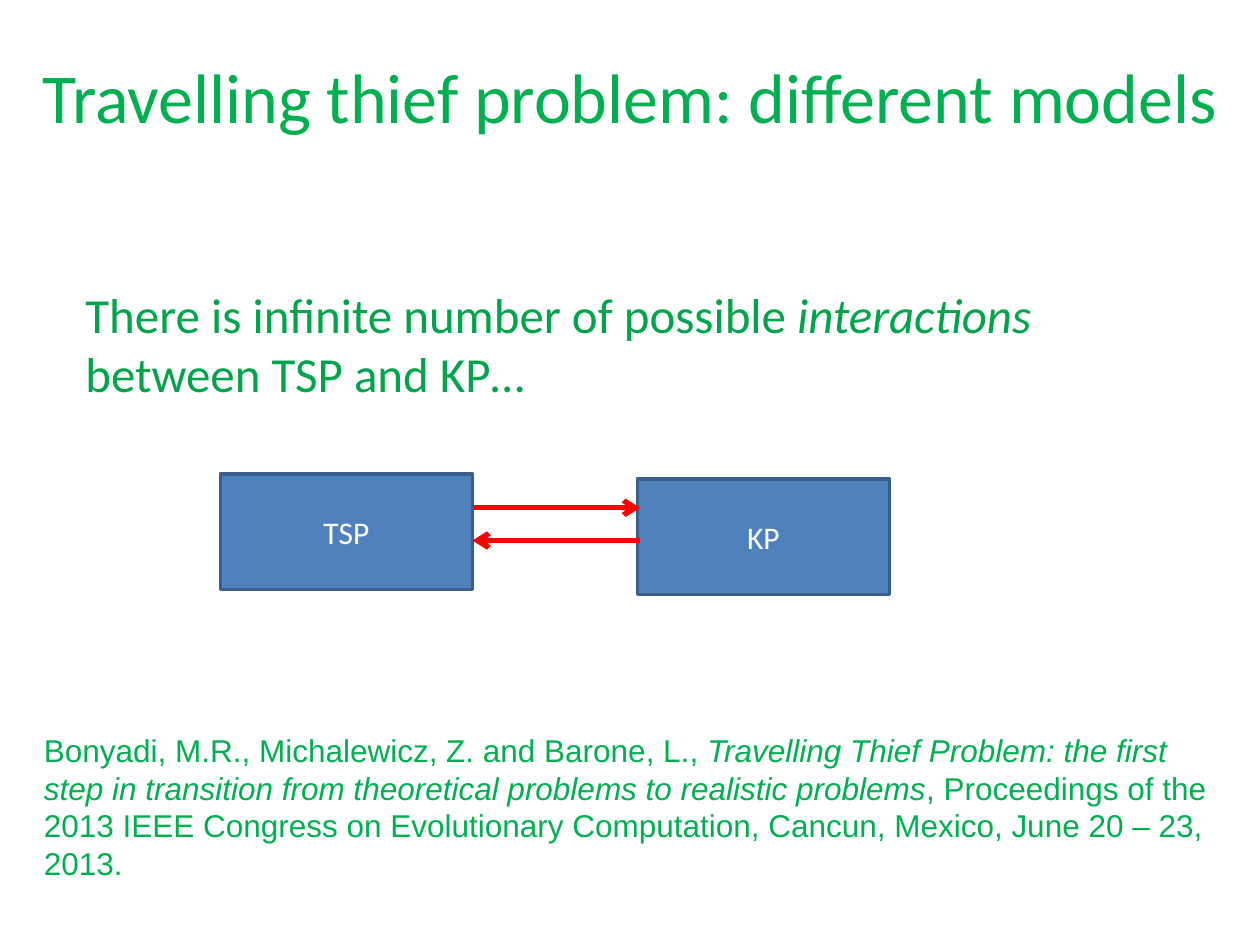
import pptx
import pptx.dml.color
import pptx.enum.shapes
import pptx.enum.text
import pptx.oxml.ns
import pptx.util
from lxml import etree

Inches = pptx.util.Inches
Pt = pptx.util.Pt
ALIGN = pptx.enum.text.PP_ALIGN
ANCHOR = pptx.enum.text.MSO_ANCHOR

COLORS = {
    "heading": "00B050",
    "body": "00A44A",
    "box": "4F81BD",
    "border": "3A5F8C",
    "label": "FFFFFF",
    "arrow": "FF0000",
}


def rgb(name):
    return pptx.dml.color.RGBColor.from_string(COLORS[name])


def write_text(shape, runs, color, font_format, frame_format, alignment):
    """Fill a shape with one paragraph; each run is (text, italic)."""
    frame = shape.text_frame
    for name, value in {"word_wrap": True, **frame_format}.items():
        setattr(frame, name, value)
    paragraph = frame.paragraphs[0]
    paragraph.alignment = alignment
    for text, italic in runs:
        run = paragraph.add_run()
        run.text = text
        for name, value in {**font_format, "italic": italic}.items():
            setattr(run.font, name, value)
        run.font.color.rgb = rgb(color)


presentation = pptx.Presentation()
presentation.slide_width = Inches(10)
presentation.slide_height = Inches(7.5)
slide = presentation.slides.add_slide(presentation.slide_layouts[6])

# Title, statement and reference
texts = [
    ((0, 0.13, 10, 1.26),
     [("Travelling thief problem: different models", False)],
     "heading", {"name": "Calibri", "size": Pt(40)},
     {"vertical_anchor": ANCHOR.MIDDLE}, ALIGN.CENTER),
    ((0.58, 1.65, 9, 4.95),
     [("There is infinite number of possible ", False),
      ("interactions ", True),
      ("between TSP and KP…", False)],
     "body", {"name": "Calibri", "size": Pt(28)},
     {"margin_top": Inches(0.61)}, ALIGN.LEFT),
    ((0.25, 5.75, 9.47, 1.31),
     [("Bonyadi, M.R., Michalewicz, Z. and Barone, L., ", False),
      ("Travelling Thief Problem: the first step in transition from "
       "theoretical problems to realistic problems", True),
      (", Proceedings of the 2013 IEEE Congress on Evolutionary "
       "Computation, Cancun, Mexico, June 20 – 23, 2013.", False)],
     "heading", {"name": "Arial", "size": Pt(18)},
     {"auto_size": pptx.enum.text.MSO_AUTO_SIZE.SHAPE_TO_FIT_TEXT}, ALIGN.LEFT),
]
for place, *content in texts:
    text_box = slide.shapes.add_textbox(*map(Inches, place))
    write_text(text_box, *content)

# Problem boxes
for label, left, top in [("TSP", 1.75, 3.76), ("KP", 5.06, 3.8)]:
    box = slide.shapes.add_shape(
        pptx.enum.shapes.MSO_SHAPE.RECTANGLE,
        Inches(left), Inches(top), Inches(2), Inches(0.92))
    box.shadow.inherit = False
    box.fill.solid()
    box.fill.fore_color.rgb = rgb("box")
    box.line.color.rgb = rgb("border")
    box.line.width = Pt(2)
    write_text(box, [(label, False)], "label",
               {"name": "Calibri", "size": Pt(18)},
               {"vertical_anchor": ANCHOR.MIDDLE}, ALIGN.CENTER)

# Interaction arrows, one each way
for start, end, height in [(3.75, 5.08, 4.03), (5.08, 3.75, 4.29)]:
    arrow = slide.shapes.add_connector(
        pptx.enum.shapes.MSO_CONNECTOR.STRAIGHT,
        Inches(start), Inches(height), Inches(end), Inches(height))
    arrow.line.color.rgb = rgb("arrow")
    arrow.line.width = Pt(3)
    line = arrow.line._get_or_add_ln()
    etree.SubElement(line, pptx.oxml.ns.qn("a:tailEnd"), type="arrow")
    etree.SubElement(arrow._element.spPr, pptx.oxml.ns.qn("a:effectLst"))

presentation.save("out.pptx")
